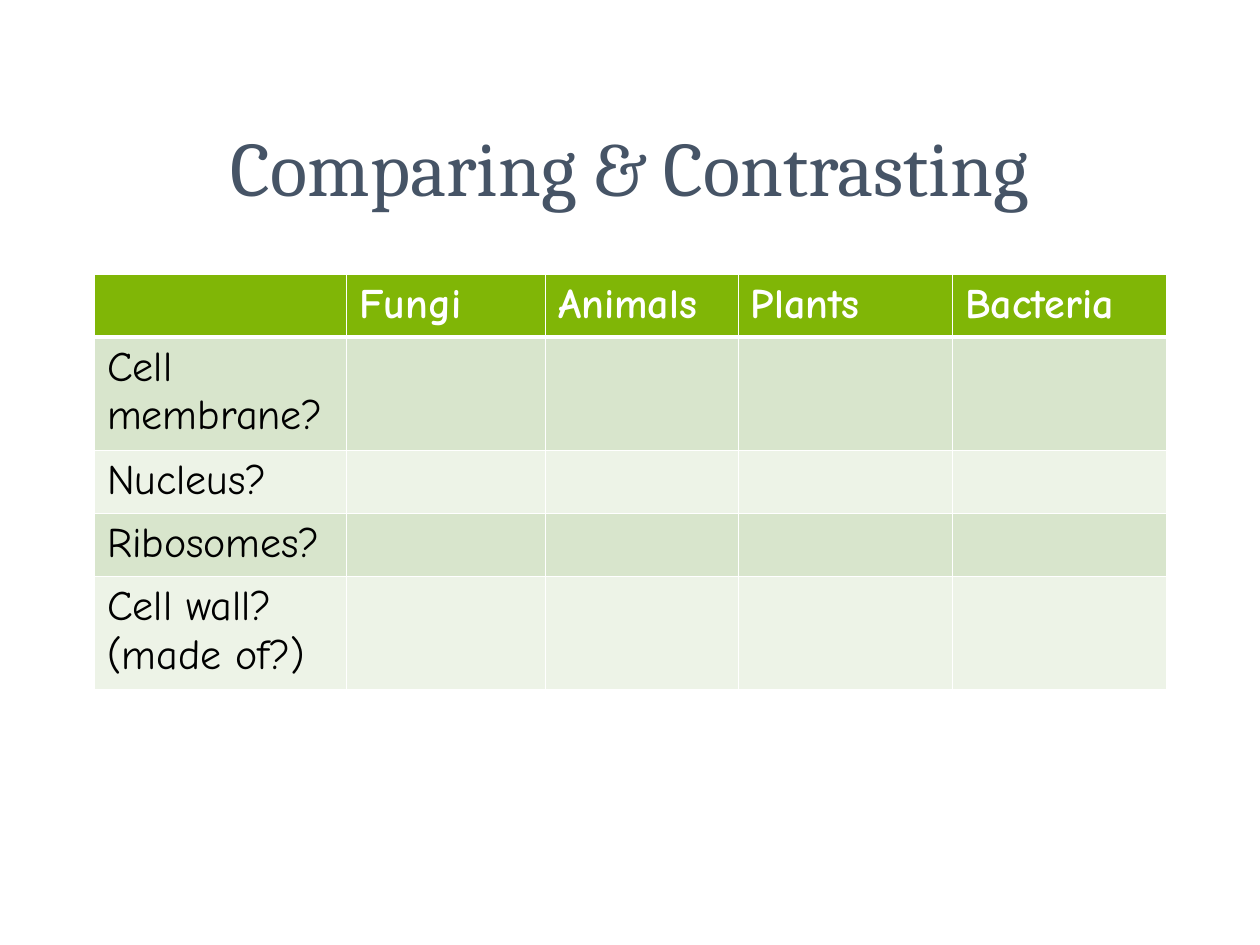
from lxml import etree
from pptx import Presentation
from pptx.dml.color import RGBColor
from pptx.enum.text import MSO_ANCHOR, PP_ALIGN
from pptx.oxml.ns import qn
from pptx.util import Emu, Inches, Pt

CENTER, LEFT = PP_ALIGN.CENTER, PP_ALIGN.LEFT
MIDDLE = MSO_ANCHOR.MIDDLE

WIDTH, HEIGHT = Inches(10), Inches(7.5)
TITLE_FONT, TABLE_FONT = "Cambria", "Comic Neue"
SLATE, GREEN, WHITE, BLACK = "465466", "80B606", "FFFFFF", "000000"
BANDS = ("D8E5CC", "EDF3E7")

COLUMN_WIDTHS = (2, 1.58, 1.53, 1.7, 1.7)
ROW_HEIGHT = 0.41
HEADINGS = ("", "Fungi", "Animals", "Plants", "Bacteria")
QUESTIONS = ("Cell membrane?", "Nucleus?", "Ribosomes?", "Cell wall?\n(made of?)")


def color(value):
    return RGBColor.from_string(value)


def share_box(left, top, width, height):
    """Turn shares of the slide's size into lengths."""
    return (Emu(int(left * WIDTH)), Emu(int(top * HEIGHT)),
            Emu(int(width * WIDTH)), Emu(int(height * HEIGHT)))


def write_text(frame, text, *, size, font, fill, bold=False, align=LEFT):
    """Write each line of the text as one formatted paragraph."""
    for index, line in enumerate(text.split("\n")):
        paragraph = frame.add_paragraph() if index else frame.paragraphs[0]
        paragraph.alignment = align
        run = paragraph.add_run()
        run.text = line
        run.font.size, run.font.name, run.font.bold = Pt(size), font, bold
        run.font.color.rgb = color(fill)


def add_borders(cell, bottom_width):
    """Give a cell white edges; they must come before its fill."""
    properties = cell._tc.get_or_add_tcPr()
    widths = {"a:lnL": 1, "a:lnR": 1, "a:lnT": 1, "a:lnB": bottom_width}
    for tag, width in widths.items():
        line = etree.SubElement(properties, qn(tag), w=str(Pt(width)))
        solid = etree.SubElement(line, qn("a:solidFill"))
        etree.SubElement(solid, qn("a:srgbClr"), val=WHITE)


def add_title(slide, box):
    frame = slide.shapes.add_textbox(*box).text_frame
    frame.word_wrap = True
    frame.vertical_anchor = MIDDLE
    write_text(frame, "Comparing & Contrasting", size=44, font=TITLE_FONT,
               fill=SLATE, align=CENTER)


def add_comparison_table(slide, box):
    # One heading row, then one row for each question
    rows = [HEADINGS] + [(question, "", "", "", "") for question in QUESTIONS]
    table = slide.shapes.add_table(len(rows), len(HEADINGS), *box).table
    for column, width in zip(table.columns, COLUMN_WIDTHS):
        column.width = Inches(width)

    for row_index, texts in enumerate(rows):
        # Rows grow with their text
        table.rows[row_index].height = Inches(ROW_HEIGHT)
        heading = row_index == 0
        background = GREEN if heading else BANDS[(row_index - 1) % 2]
        for column_index, text in enumerate(texts):
            cell = table.cell(row_index, column_index)
            add_borders(cell, 3 if heading else 1)
            cell.fill.solid()
            cell.fill.fore_color.rgb = color(background)
            if text:
                write_text(cell.text_frame, text, size=24, font=TABLE_FONT,
                           fill=WHITE if heading else BLACK, bold=heading)


def main():
    presentation = Presentation()
    presentation.slide_width, presentation.slide_height = WIDTH, HEIGHT
    slide = presentation.slides.add_slide(presentation.slide_layouts[6])
    add_title(slide, share_box(0.075, 0.09, 0.85, 0.17))
    add_comparison_table(slide, share_box(0.075, 0.29, 0.85, 0.27))
    presentation.save("out.pptx")


if __name__ == "__main__":
    main()
